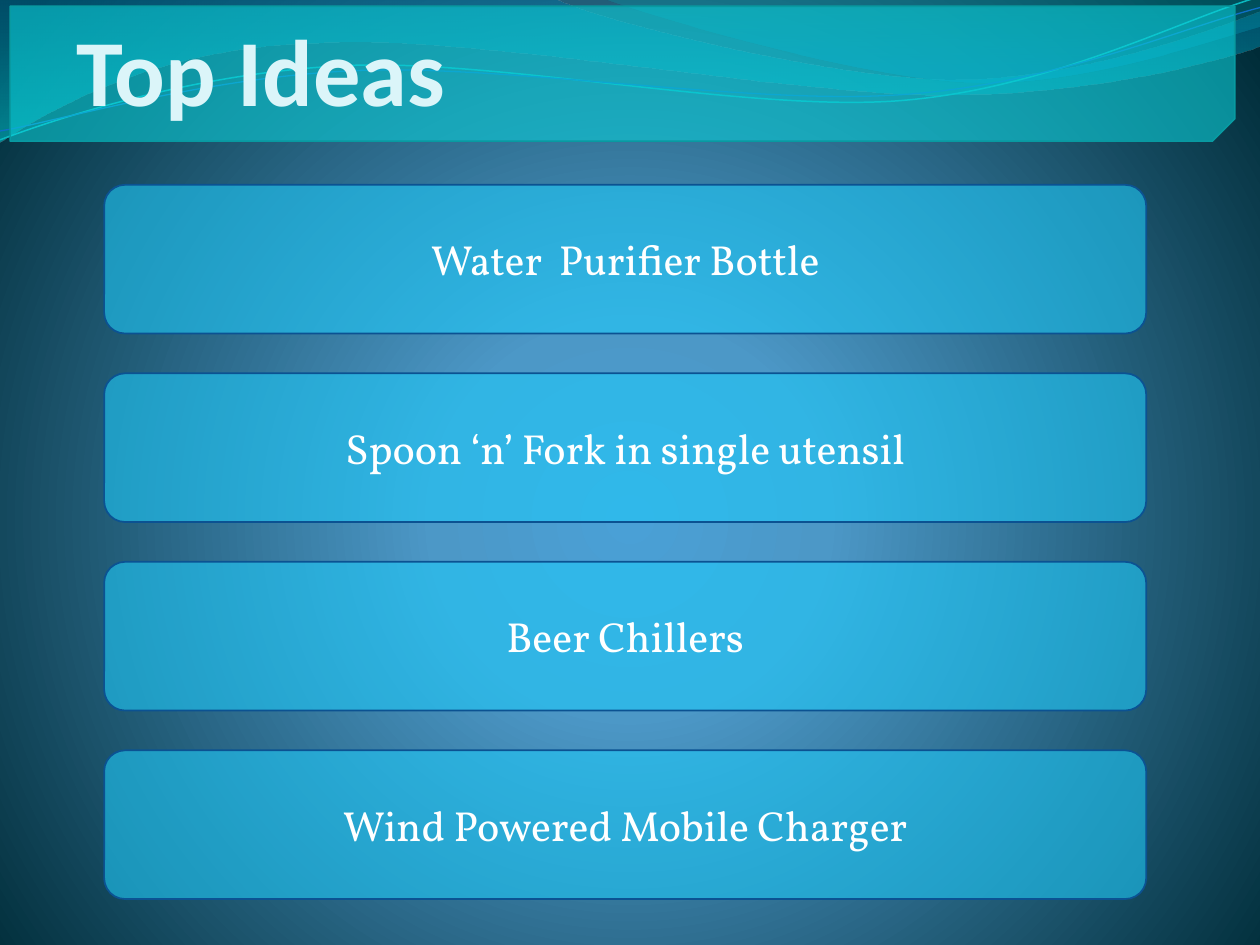
from dataclasses import dataclass
from math import cos, radians, sin
from typing import Any, Optional

from lxml.etree import SubElement
from pptx import Presentation
from pptx.dml.color import RGBColor
from pptx.enum.shapes import MSO_SHAPE
from pptx.enum.text import MSO_ANCHOR, MSO_AUTO_SIZE, PP_ALIGN
from pptx.oxml import parse_xml
from pptx.oxml.ns import nsdecls, qn
from pptx.util import Inches, Pt

COLUMNS, ROWS = 100, 75
WIDTH, HEIGHT = Inches(10), Inches(7.5)

COLORS = {
    "glow": "4AA0D6", "sky": "4C98C7", "deep": "002C38",
    "ocean": "0074A1", "aqua": "00C6CF", "teal": "00A1A9", "azure": "008BBF",
    "cyan line": "0AB8BF", "blue line": "0F6FC6",
    "banner": "0BD0D9", "banner edge": "089AA1", "title": "DBF5F9",
    "card": "20C9F8", "card edge": "0B5292", "card text": "FFFFFF",
}


@dataclass(frozen=True)
class Stop:
    position: int
    color: str
    opacity: int = 100


@dataclass(frozen=True)
class Box:
    column: float
    row: float
    columns: float
    rows: float

    def emu(self) -> tuple[int, int, int, int]:
        return (*grid_point(self.column, self.row),
                *grid_point(self.columns, self.rows))


@dataclass(frozen=True)
class Wave:
    start: tuple
    segments: tuple
    stops: tuple = ()
    edge: str = ""
    weight: float = 0
    tilt: float = 0
    pivot: tuple = (0, 0)


@dataclass(frozen=True)
class Panel:
    preset: Any
    box: Box
    fill: str
    opacity: int
    edge: str
    corner: Optional[float] = None


@dataclass(frozen=True)
class Lettering:
    font: str
    size: int
    color: str
    bold: bool
    anchor: Any
    margins: tuple


WAVES = (
    Wave((0, 0), (
        (44, -0.1), (47.6, 1.7, 66.4, 6.3, 75.8, 6.3),
        (85.3, 6.3, 95.8, 2.6, 100, 0.9), (100.1, 3.6),
        (98.3, 4.4, 87, 7.6, 74.6, 7.5), (62.2, 7.5, 38.2, 2.8, 25.7, 3.4),
        (12.9, 3.6, 4.6, 8.3, -0.1, 11.3), (0, 0)),
        stops=(Stop(0, "ocean", 45), Stop(100, "aqua", 55))),
    Wave((47.9, -0.1), (
        (50.9, 1.1, 68.2, 6.2, 76.9, 6.5), (85.6, 6.9, 96.1, 3.2, 100, 2.1),
        (100, 0), (47.9, -0.1)),
        stops=(Stop(0, "teal", 30), Stop(80, "azure", 45))),
    Wave((0, 11.1), (
        (4.8, 9.3, 15.8, 5.7, 27.7, 5.2), (39.5, 4.7, 59.3, 8.9, 71.3, 8),
        (83.3, 7.1, 93.8, 1.5, 99.8, -0.2)),
        edge="cyan line", weight=0.85, tilt=-2.7, pivot=(49.9, 5.75)),
    Wave((0, 10.4), (
        (4.7, 9.6, 16.4, 6.1, 28.3, 5.6), (40.3, 5.1, 59.7, 8.4, 71.7, 7.5),
        (83.6, 6.7, 94.1, 2.1, 100, 0.6)),
        edge="blue line", weight=0.75, tilt=-2.7, pivot=(49.95, 5.9)),
)

IDEAS = ("Water  Purifier Bottle", "Spoon ‘n’ Fork in single utensil",
         "Beer Chillers", "Wind Powered Mobile Charger")
FIRST_CARD = Box(8.27, 14.67, 82.7, 11.8)
CARD_PITCH = 14.96
BANNER = Panel(MSO_SHAPE.SNIP_1_RECTANGLE, Box(0.8, 0.5, 97.2, 10.7),
               "banner", 58, "banner edge")
TITLE_BOX = Box(-21.7, -6.15, 85, 16.1)
TITLE_STYLE = Lettering("Calibri", 54, "title", True,
                        MSO_ANCHOR.BOTTOM, (0, 0, 0.02, 0))
CARD_STYLE = Lettering("Vollkorn", 24, "card text", False,
                       MSO_ANCHOR.MIDDLE, (0.1, 0.05, 0.1, 0.05))


def grid_point(column: float, row: float) -> tuple[int, int]:
    return round(column * WIDTH / COLUMNS), round(row * HEIGHT / ROWS)


def rgb(name: str) -> RGBColor:
    return RGBColor.from_string(COLORS[name])


def apply_formats(target: Any, formats: dict) -> None:
    for attribute, value in formats.items():
        setattr(target, attribute, value)


def set_gradient(holder: Any, stops: tuple, direction: str) -> None:
    entries = "".join(
        f'<a:gs pos="{stop.position * 1000}"><a:srgbClr val="{COLORS[stop.color]}">'
        f'<a:alpha val="{stop.opacity * 1000}"/></a:srgbClr></a:gs>'
        for stop in stops)
    gradient = parse_xml(
        f'<a:gradFill {nsdecls("a")} rotWithShape="1">'
        f'<a:gsLst>{entries}</a:gsLst>{direction}</a:gradFill>')
    holder.replace(holder.find(qn("a:solidFill")), gradient)


def paint_background(slide: Any) -> None:
    slide.background.fill.solid()
    set_gradient(
        slide.element.xpath(".//p:bgPr")[0],
        (Stop(0, "glow"), Stop(25, "sky"), Stop(100, "deep")),
        '<a:path path="circle"><a:fillToRect l="10000" t="110000" '
        'r="10000" b="100000"/></a:path>')


def level_point(wave: Wave, column: float, row: float) -> tuple[int, int]:
    angle = radians(-wave.tilt)
    across, down = column - wave.pivot[0], row - wave.pivot[1]
    return grid_point(
        wave.pivot[0] + across * cos(angle) - down * sin(angle),
        wave.pivot[1] + across * sin(angle) + down * cos(angle))


def draw_wave(slide: Any, wave: Wave) -> None:
    curves = [[level_point(wave, *segment[i:i + 2])
               for i in range(0, len(segment), 2)] for segment in wave.segments]
    builder = slide.shapes.build_freeform(*level_point(wave, *wave.start))
    builder.add_line_segments([curve[-1] for curve in curves],
                              close=bool(wave.stops))
    ribbon = builder.convert_to_shape()
    for step, curve in zip(ribbon.element.xpath(".//a:lnTo"), curves):
        if len(curve) == 3:
            bend = SubElement(step.getparent(), qn("a:cubicBezTo"))
            for x, y in curve:
                SubElement(bend, qn("a:pt"), x=str(x - ribbon.left),
                           y=str(y - ribbon.top))
            step.getparent().replace(step, bend)
    ribbon.shadow.inherit = False
    ribbon.rotation = wave.tilt
    if wave.stops:
        ribbon.fill.solid()
        set_gradient(ribbon.element.spPr, wave.stops,
                     '<a:lin ang="5400000" scaled="1"/>')
        ribbon.line.fill.background()
    else:
        ribbon.fill.background()
        ribbon.line.color.rgb = rgb(wave.edge)
        ribbon.line.width = Pt(wave.weight)


def draw_panel(slide: Any, panel: Panel) -> Any:
    shape = slide.shapes.add_shape(panel.preset, *panel.box.emu())
    shape.shadow.inherit = False
    shape.fill.solid()
    shape.fill.fore_color.rgb = rgb(panel.fill)
    tint = shape.element.spPr.find(qn("a:solidFill"))[0]
    SubElement(tint, qn("a:alpha"), val=str(panel.opacity * 1000))
    shape.line.color.rgb = rgb(panel.edge)
    shape.line.width = Pt(1)
    if panel.corner is not None:
        shape.adjustments[0] = panel.corner
    return shape


def write(shape: Any, wording: str, style: Lettering) -> None:
    frame = shape.text_frame
    frame.text = wording
    sides = ("margin_left", "margin_top", "margin_right", "margin_bottom")
    apply_formats(frame, {
        "word_wrap": True, "auto_size": MSO_AUTO_SIZE.NONE,
        "vertical_anchor": style.anchor,
        **dict(zip(sides, map(Inches, style.margins)))})
    paragraph = frame.paragraphs[0]
    paragraph.alignment = PP_ALIGN.CENTER
    font = paragraph.runs[0].font
    apply_formats(font, {"name": style.font, "size": Pt(style.size),
                         "bold": style.bold})
    font.color.rgb = rgb(style.color)


def main() -> None:
    deck = Presentation()
    apply_formats(deck, {"slide_width": WIDTH, "slide_height": HEIGHT})
    slide = deck.slides.add_slide(deck.slide_layouts[5])
    paint_background(slide)
    for wave in WAVES:
        draw_wave(slide, wave)
    banner = draw_panel(slide, BANNER)
    banner.rotation = 180
    banner.element.spPr.xfrm.set("flipH", "1")
    title = slide.shapes.title
    apply_formats(title, dict(zip(("left", "top", "width", "height"),
                                  TITLE_BOX.emu())))
    write(title, "Top Ideas", TITLE_STYLE)
    banner.element.addnext(title.element)
    for index, idea in enumerate(IDEAS):
        box = Box(FIRST_CARD.column, FIRST_CARD.row + index * CARD_PITCH,
                  FIRST_CARD.columns, FIRST_CARD.rows)
        card = draw_panel(slide, Panel(MSO_SHAPE.ROUNDED_RECTANGLE, box,
                                       "card", 60, "card edge", 0.14))
        write(card, idea, CARD_STYLE)
    deck.save("out.pptx")


if __name__ == "__main__":
    main()
